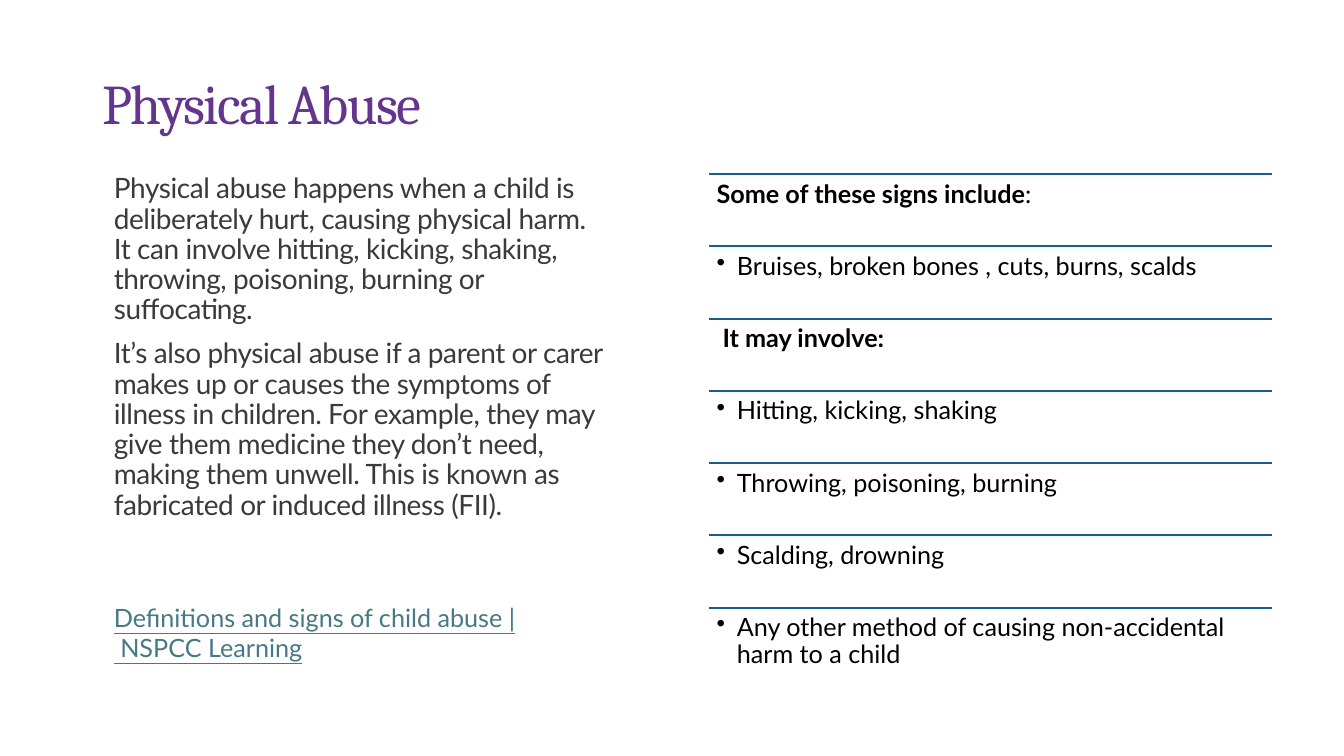
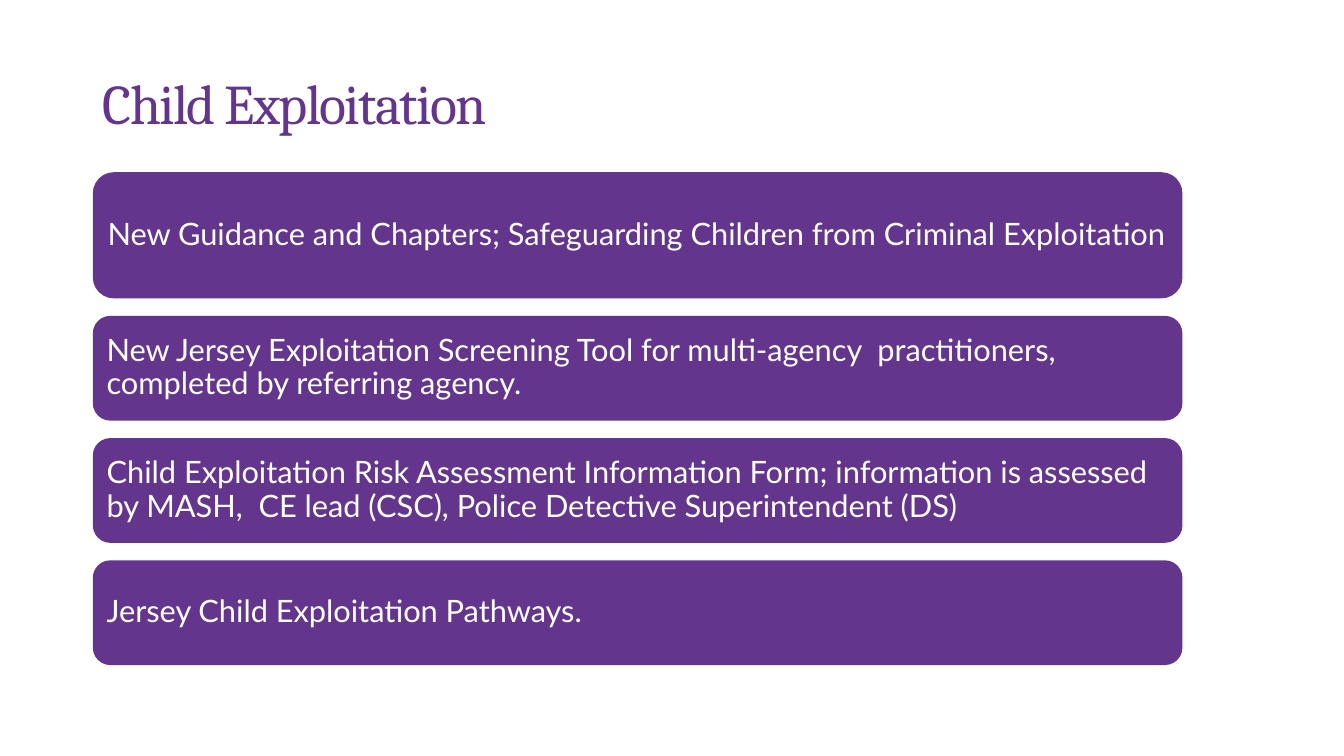
"""Build two safeguarding slides: signs of physical abuse and child exploitation."""
from lxml import etree
from pptx import Presentation
from pptx.dml.color import RGBColor
from pptx.enum.shapes import MSO_CONNECTOR, MSO_SHAPE
from pptx.enum.text import MSO_ANCHOR, PP_ALIGN
from pptx.oxml.ns import qn
from pptx.util import Cm, Pt

LINE = MSO_CONNECTOR.STRAIGHT
CARD = MSO_SHAPE.ROUNDED_RECTANGLE
TOP, MID = MSO_ANCHOR.TOP, MSO_ANCHOR.MIDDLE
LEFT = PP_ALIGN.LEFT

THEME = {
    "fill": "64358C",
    "rule": "156082",
    "title": {"name": "Cambria", "size": Pt(40), "color": "64358C", "spc": -120},
    "body": {"name": "Lato", "size": Pt(20), "color": "3A3A3A", "spc": -30},
    "sign": {"name": "Lato", "size": Pt(18), "color": "000000"},
    "head": {"name": "Lato", "size": Pt(18), "color": "000000", "bold": True},
    "link": {"name": "Lato", "size": Pt(18), "color": "467886", "underline": True},
    "card": {"name": "Lato", "size": Pt(22), "color": "FFFFFF"},
}

ABUSE = {
    "title": "Physical Abuse",
    "body": [
        "Physical abuse happens when a child is deliberately hurt, causing "
        "physical harm. It can involve hitting, kicking, shaking, throwing, "
        "poisoning, burning or suffocating.",
        "It’s also physical abuse if a parent or carer makes up or causes the "
        "symptoms of illness in children. For example, they may give them "
        "medicine they don’t need, making them unwell. This is known as "
        "fabricated or induced illness (FII).",
    ],
    "link": ["Definitions and signs of child abuse |", " NSPCC Learning"],
    "signs": [
        {"runs": [("Some of these signs include", "head"), (":", "sign")]},
        {"runs": [("Bruises, broken bones , cuts, burns, scalds", "sign")], "dot": True},
        {"runs": [("It may involve:", "head")], "pad": 0.15},
        {"runs": [("Hitting, kicking, shaking", "sign")], "dot": True},
        {"runs": [("Throwing, poisoning, burning", "sign")], "dot": True},
        {"runs": [("Scalding, drowning", "sign")], "dot": True},
        {"runs": [("Any other method of causing non-accidental harm to a child", "sign")],
         "dot": True},
    ],
}

EXPLOIT = {
    "title": "Child Exploitation",
    "cards": [
        ("New Guidance and Chapters; Safeguarding Children from Criminal Exploitation", 3.18),
        ("New Jersey Exploitation Screening Tool for multi-agency  practitioners, "
         "completed by referring agency.", 2.64),
        ("Child Exploitation Risk Assessment Information Form; information is assessed "
         "by MASH,  CE lead (CSC), Police Detective Superintendent (DS)", 2.64),
        ("Jersey Child Exploitation Pathways.", 2.64),
    ],
}


def style(run, kind):
    for key, val in THEME[kind].items():
        if key == "color":
            run.font.color.rgb = RGBColor.from_string(val)
        elif key == "spc":
            run._r.get_or_add_rPr().set("spc", str(val))
        else:
            setattr(run.font, key, val)


def indent(para, pad, dot):
    props = para._p.get_or_add_pPr()
    hang = Cm(0.51) if dot else 0
    props.set("marL", str(Cm(pad) + hang))
    props.set("indent", str(-hang))
    if dot:
        etree.SubElement(props, qn("a:buChar")).set("char", "•")


def write(shape, paras, space=0.9, gap=0, inset=(0.25, 0.13), anchor=TOP):
    frame = shape.text_frame
    form = {
        "word_wrap": True, "vertical_anchor": anchor,
        "margin_left": Cm(inset[0]), "margin_right": Cm(inset[0]),
        "margin_top": Cm(inset[1]), "margin_bottom": Cm(inset[1]),
    }
    for key, val in form.items():
        setattr(frame, key, val)
    for num, item in enumerate(paras):
        para = frame.add_paragraph() if num else frame.paragraphs[0]
        look = {"alignment": LEFT, "line_spacing": space,
                "space_before": Pt(gap if num else 0)}
        for key, val in look.items():
            setattr(para, key, val)
        if "dot" in item or "pad" in item:
            indent(para, item.get("pad", 0), item.get("dot", False))
        for text, kind in item["runs"]:
            run = para.add_run()
            run.text = text
            style(run, kind)


def plain(texts, kind):
    return [{"runs": [(text, kind)]} for text in texts]


def add_box(slide, area, paras, **form):
    write(slide.shapes.add_textbox(*map(Cm, area)), paras, **form)


def add_rule(slide, left, top, width):
    rule = slide.shapes.add_connector(LINE, Cm(left), Cm(top), Cm(left + width), Cm(top))
    rule.line.color.rgb = RGBColor.from_string(THEME["rule"])
    rule.line.width = Pt(1.5)
    etree.SubElement(rule._element.spPr, qn("a:effectLst"))


def add_card(slide, area, text):
    card = slide.shapes.add_shape(CARD, *map(Cm, area))
    card.shadow.inherit = False
    card.fill.solid()
    card.fill.fore_color.rgb = RGBColor.from_string(THEME["fill"])
    card.line.fill.background()
    write(card, plain([text], "card"), inset=(0.22, 0.22), anchor=MID)


def start(deck, title, width):
    slide = deck.slides.add_slide(deck.slide_layouts[6])
    add_box(slide, (2.34, 1.78, width, 2.82), plain([title], "title"))
    return slide


def show_abuse(deck):
    slide = start(deck, ABUSE["title"], 9.5)
    add_box(slide, (2.62, 4.27, 12.83, 10.52), plain(ABUSE["body"], "body"), gap=10)
    left, top, width, step = 17.88, 4.39, 14.17, 1.82
    for num, sign in enumerate(ABUSE["signs"]):
        row = top + num * step
        add_rule(slide, left, row, width)
        add_box(slide, (left, row, width, step), [sign], inset=(0.18, 0.18))
    add_box(slide, (2.62, 15.04, 16.94, 1.8), plain(ABUSE["link"], "link"), space=1.0)


def show_exploit(deck):
    slide = start(deck, EXPLOIT["title"], 28.35)
    top, gap = 4.34, 0.44
    for text, height in EXPLOIT["cards"]:
        add_card(slide, (2.34, top, 27.46, height), text)
        top += height + gap


def main():
    deck = Presentation()
    deck.slide_width, deck.slide_height = Cm(33.87), Cm(19.05)
    show_abuse(deck)
    show_exploit(deck)
    deck.save("out.pptx")


if __name__ == "__main__":
    main()
